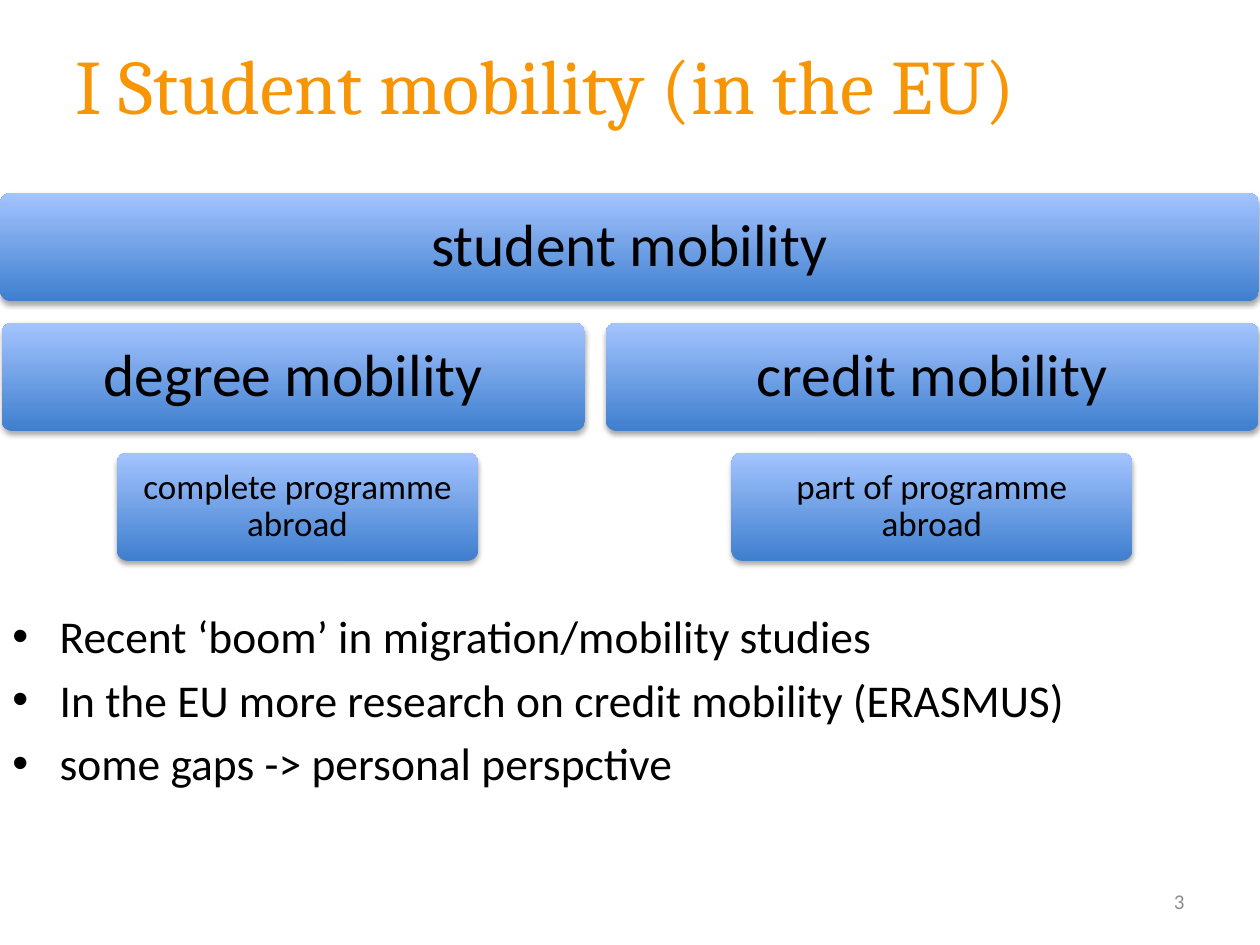
"""Build the student mobility slide."""
from lxml.etree import SubElement as Sub
from pptx import Presentation
from pptx.dml.color import RGBColor as Rgb
from pptx.enum.shapes import MSO_SHAPE as Kind
from pptx.enum.text import MSO_ANCHOR as Anchor, PP_ALIGN as Align
from pptx.oxml.ns import qn
from pptx.util import Pt

HUES = {"title": "F79505", "text": "000000", "page": "8C8C8C",
        "low": "3F7FCE", "high": "A4C4FF", "shade": "000000"}
TOP, HIGH, STEP = 110.2, 61.9, 74.2


class Deck:
    """Hold the style and the current slide."""

    def __init__(self):
        self.prs = Presentation()
        self.prs.slide_width, self.prs.slide_height = Pt(720), Pt(540)
        self.slide = self.prs.slides.add_slide(self.prs.slide_layouts[5])

    def run(self, para, text, size, hue="text", font="Calibri"):
        """Add one styled run."""
        run = para.add_run()
        run.text = text
        run.font.size, run.font.name = Pt(size), font
        run.font.color.rgb = Rgb.from_string(HUES[hue])

    def title(self, text, *area):
        """Place and fill the title."""
        head = self.slide.shapes.title
        head.left, head.top, head.width, head.height = map(Pt, area)
        head.text_frame.vertical_anchor = Anchor.MIDDLE
        para = head.text_frame.paragraphs[0]
        para.alignment = Align.LEFT
        self.run(para, text, 44, "title", "Cambria")

    def text(self, *area):
        """Add an empty wrapping text box and return its frame."""
        frame = self.slide.shapes.add_textbox(*map(Pt, area)).text_frame
        frame.word_wrap = True
        return frame

    def list(self, items, *area):
        """Add a bulleted list."""
        frame = self.text(*area)
        for i, item in enumerate(items):
            para = frame.add_paragraph() if i else frame.paragraphs[0]
            para.space_before = Pt(5.2)
            props = para._p.get_or_add_pPr()
            props.set("marL", str(Pt(27)))
            props.set("indent", str(Pt(-27)))
            Sub(props, qn("a:buFont"), typeface="Arial")
            Sub(props, qn("a:buChar"), char="•")
            self.run(para, item, 26)

    def page(self, text, *area):
        """Add the page number."""
        frame = self.text(*area)
        frame.vertical_anchor = Anchor.MIDDLE
        para = frame.paragraphs[0]
        para.alignment = Align.RIGHT
        self.run(para, text, 12, "page")

    def box(self, text, row, left, width, size, pad):
        """Add a shaded rounded box with a centred label."""
        area = map(Pt, (left, TOP + row * STEP, width, HIGH))
        box = self.slide.shapes.add_shape(Kind.ROUNDED_RECTANGLE, *area)
        box.adjustments[0] = 0.1
        box.line.fill.background()
        box.fill.gradient()
        box.fill.gradient_angle = 90
        for stop, hue in zip(box.fill.gradient_stops, ("low", "high")):
            stop.color.rgb = Rgb.from_string(HUES[hue])
        self.shade(box)
        frame = box.text_frame
        frame.word_wrap, frame.vertical_anchor = True, Anchor.MIDDLE
        frame.margin_left = frame.margin_right = Pt(pad)
        frame.margin_top = frame.margin_bottom = Pt(pad)
        para = frame.paragraphs[0]
        para.alignment, para.line_spacing = Align.CENTER, 0.9
        self.run(para, text, size)

    def shade(self, box):
        """Give a box a soft shadow below it."""
        box.shadow.inherit = False
        glow = box._element.spPr.find(qn("a:effectLst"))
        drop = Sub(glow, qn("a:outerShdw"), blurRad=str(Pt(3.1)),
                   dist=str(Pt(1.8)), dir="5400000", rotWithShape="0")
        tint = Sub(drop, qn("a:srgbClr"), val=HUES["shade"])
        Sub(tint, qn("a:alpha"), val="35000")


def main():
    """Build and save the slide."""
    deck = Deck()
    deck.title("I Student mobility (in the EU)", 36, 3, 648, 90)
    deck.list(("Recent ‘boom’ in migration/mobility studies",
               "In the EU more research on credit mobility (ERASMUS)",
               "some gaps -> personal perspctive"), 0, 344, 720, 160.6)
    deck.page("3", 516, 500.5, 168, 28.8)
    for item in (("student mobility", 0, 0, 719.4, 34, 12),
                 ("degree mobility", 1, 0.9, 333.4, 34, 12),
                 ("complete programme abroad", 2, 66.8, 206.4, 20, 7.5),
                 ("credit mobility", 1, 346.2, 373, 34, 12),
                 ("part of programme abroad", 2, 418, 229, 20, 7.5)):
        deck.box(*item)
    deck.prs.save("out.pptx")


if __name__ == "__main__":
    main()
